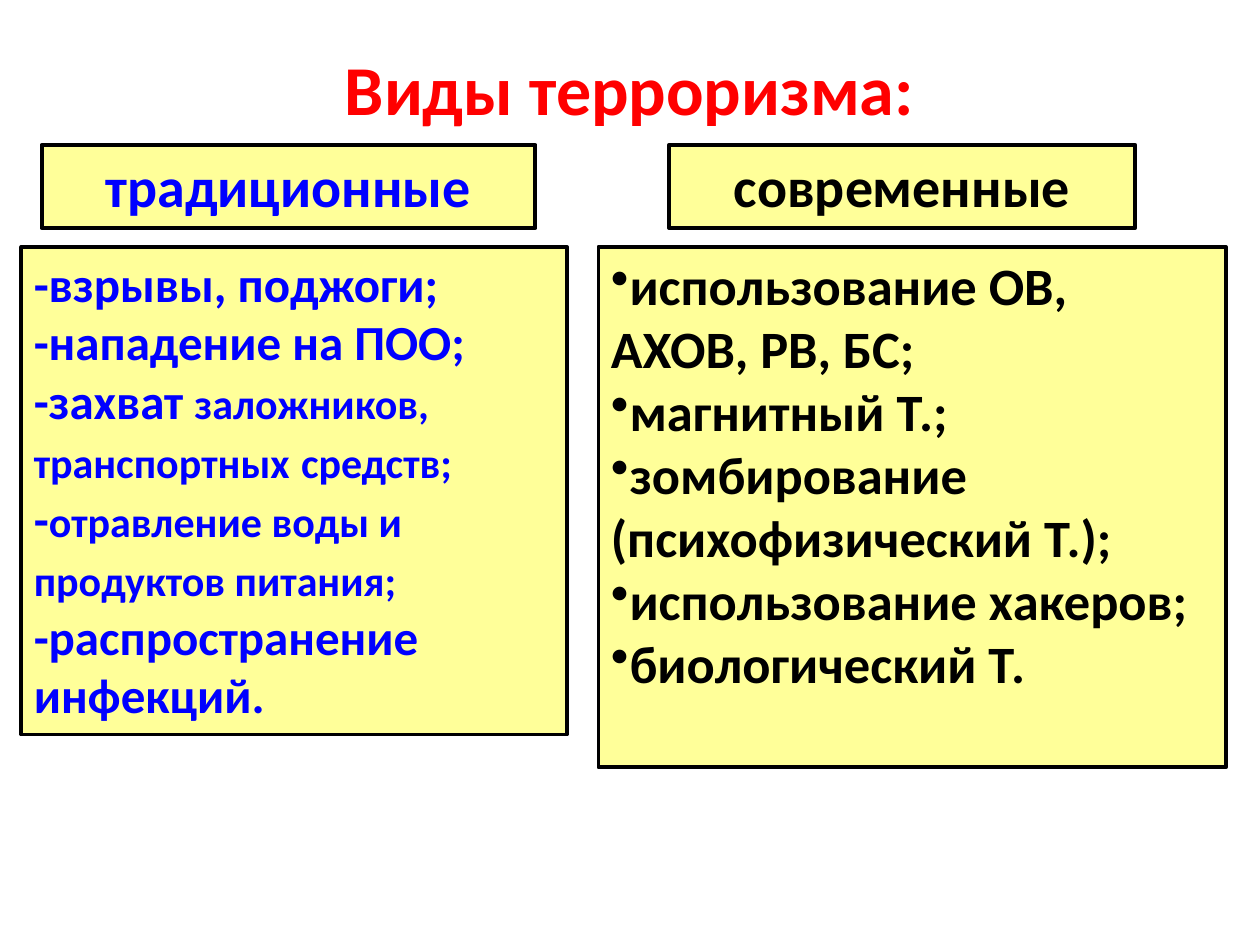
from dataclasses import dataclass

from lxml.etree import SubElement
from pptx import Presentation
from pptx.dml.color import RGBColor
from pptx.enum.shapes import MSO_SHAPE
from pptx.enum.text import MSO_ANCHOR, MSO_AUTO_SIZE, PP_ALIGN
from pptx.oxml.ns import qn
from pptx.util import Inches, Pt


@dataclass(frozen=True)
class Theme:
    font: str = "Calibri"
    red: RGBColor = RGBColor(0xFF, 0x00, 0x00)
    blue: RGBColor = RGBColor(0x00, 0x00, 0xFF)
    black: RGBColor = RGBColor(0x00, 0x00, 0x00)
    yellow: RGBColor = RGBColor(0xFF, 0xFF, 0x99)
    border: float = 2.25
    title: int = 40
    heading: int = 32
    modern: int = 30
    traditional: int = 28
    detail: int = 24


theme = Theme()


def write(frame, paragraphs, color, align=PP_ALIGN.LEFT, bullet=None):
    """Fill a text frame; each paragraph is a list of (text, size) runs."""
    frame.word_wrap = True
    frame.auto_size = MSO_AUTO_SIZE.SHAPE_TO_FIT_TEXT
    frame.vertical_anchor = MSO_ANCHOR.TOP
    for index, runs in enumerate(paragraphs):
        paragraph = frame.add_paragraph() if index else frame.paragraphs[0]
        paragraph.alignment = align
        paragraph.space_before = Pt(0)
        for text, size in runs:
            run = paragraph.add_run()
            run.text = text
            run.font.name = theme.font
            run.font.size = Pt(size)
            run.font.bold = True
            run.font.color.rgb = color
        if bullet:
            properties = paragraph._p.get_or_add_pPr()
            SubElement(properties, qn("a:buChar")).set("char", bullet)


def add_panel(left, top, width, height):
    panel = slide.shapes.add_shape(
        MSO_SHAPE.RECTANGLE, Inches(left), Inches(top), Inches(width), Inches(height))
    panel.shadow.inherit = False
    panel.fill.solid()
    panel.fill.fore_color.rgb = theme.yellow
    panel.line.color.rgb = theme.black
    panel.line.width = Pt(theme.border)
    return panel.text_frame


presentation = Presentation()
presentation.slide_width = Inches(10)
presentation.slide_height = Inches(7.5)
slide = presentation.slides.add_slide(presentation.slide_layouts[5])

title = slide.shapes.title
title.left, title.top = Inches(0.27), Inches(0.31)
title.width, title.height = Inches(9.45), Inches(0.77)
write(title.text_frame, [[("Виды терроризма:", theme.title)]], theme.red, PP_ALIGN.CENTER)

large, small = theme.traditional, theme.detail
traditional_kinds = [
    [("-взрывы, поджоги;", large)],
    [("-нападение на ПОО;", large)],
    [("-захват ", large), ("заложников,", small)],
    [("транспортных", small), (" ", large), ("средств;", small)],
    [("-", large), ("отравление воды и продуктов питания;", small), (" ", large)],
    [("-распространение", large)],
    [("инфекций.", large)],
]
modern_kinds = [[(kind, theme.modern)] for kind in (
    "использование ОВ, АХОВ, РВ, БС;",
    "магнитный Т.;",
    "зомбирование (психофизический Т.);",
    "использование хакеров;",
    "биологический Т.",
)]

heading_top, heading_height, list_top = 1.15, 0.66, 1.96
columns = [
    ("традиционные", theme.blue, (0.33, 3.92), (0.17, 4.33, 3.87), traditional_kinds, None),
    ("современные", theme.black, (5.31, 3.7), (4.75, 4.98, 4.13), modern_kinds, "•"),
]
for heading, color, heading_span, list_span, kinds, bullet in columns:
    heading_left, heading_width = heading_span
    write(add_panel(heading_left, heading_top, heading_width, heading_height),
          [[(heading, theme.heading)]], color, PP_ALIGN.CENTER)
    list_left, list_width, list_height = list_span
    write(add_panel(list_left, list_top, list_width, list_height), kinds, color, bullet=bullet)

presentation.save("out.pptx")
